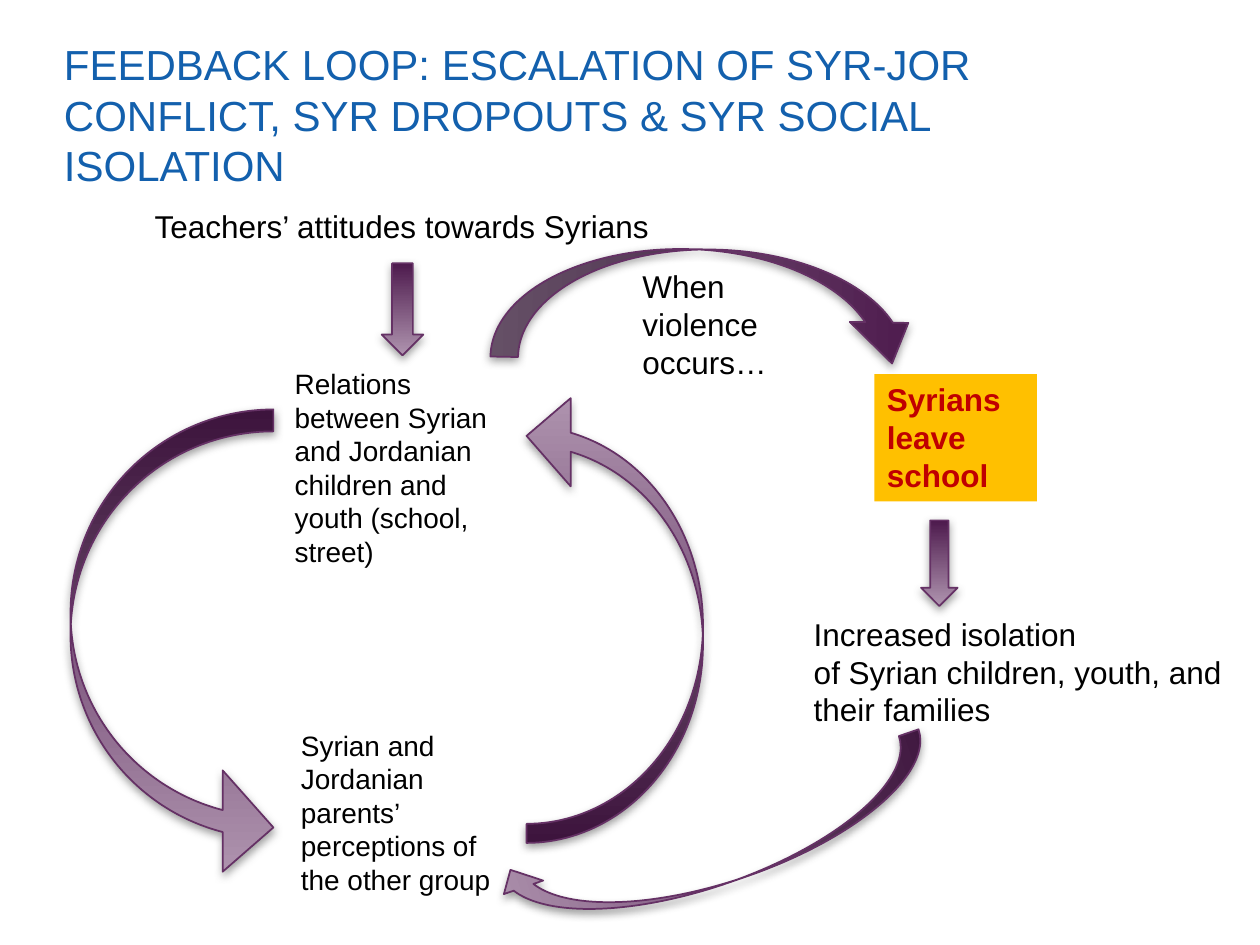
from lxml.etree import SubElement
from pptx import Presentation
from pptx.dml.color import RGBColor
from pptx.enum.shapes import MSO_SHAPE
from pptx.enum.text import MSO_ANCHOR, MSO_AUTO_SIZE, PP_ALIGN
from pptx.oxml.ns import qn
from pptx.util import Inches, Pt

COLORS = {
    "title": "1360AD", "text": "000000", "alert": "C00000", "box": "FFC000",
    "dark": "4D1A4D", "light": "AF94AF", "muted": "7F6580",
    "outline": "653165", "shadow": "808080",
}
FONT = "Arial"
COLS, ROWS = 100, 75
CELL = Inches(10) // COLS


def rgb(name):
    return RGBColor.from_string(COLORS[name])


def cells(*box):
    """Turn left, top, width, height in grid cells into lengths."""
    return [round(CELL * n) for n in box]


def write(sp, text, size, color="text", bold=False, wrap=True, grow=True):
    tf = sp.text_frame
    tf.text = text
    tf.word_wrap = wrap
    tf.vertical_anchor = MSO_ANCHOR.TOP
    tf.auto_size = MSO_AUTO_SIZE.SHAPE_TO_FIT_TEXT if grow else MSO_AUTO_SIZE.NONE
    for p in tf.paragraphs:
        p.alignment = PP_ALIGN.LEFT
        for r in p.runs:
            r.font.name = FONT
            r.font.size = Pt(size)
            r.font.bold = bold
            r.font.color.rgb = rgb(color)


def add_label(slide, box, text, size, **style):
    write(slide.shapes.add_textbox(*cells(*box)), text, size, **style)


def add_alert(slide, box, text):
    sp = slide.shapes.add_shape(MSO_SHAPE.RECTANGLE, *cells(*box))
    sp.shadow.inherit = False
    sp.fill.solid()
    sp.fill.fore_color.rgb = rgb("box")
    sp.line.fill.background()
    write(sp, text, 18, color="alert", bold=True)


def drop_shadow(sp):
    sp.shadow.inherit = False
    effects = sp._element.spPr.find(qn("a:effectLst"))
    shadow = SubElement(effects, qn("a:outerShdw"), blurRad=str(Pt(5)),
                        dist=str(Pt(2)), dir="5400000", rotWithShape="0")
    color = SubElement(shadow, qn("a:srgbClr"), val=COLORS["shadow"])
    SubElement(color, qn("a:alpha"), val="75000")


def add_arrow(slide, kind, box, adjust=(), rotation=0, flip="",
              shades=("dark", "light"), angle=270):
    """Add a shaded block arrow; flip holds the axes to mirror, H and V."""
    sp = slide.shapes.add_shape(kind, *cells(*box))
    for i, value in enumerate(adjust):
        sp.adjustments[i] = value
    sp.rotation = rotation
    for axis in flip:
        sp._element.spPr.xfrm.set("flip" + axis, "1")
    sp.fill.gradient()
    sp.fill.gradient_angle = angle
    for stop, shade, position in zip(sp.fill.gradient_stops, shades, (0, 1)):
        stop.color.rgb = rgb(shade)
        stop.position = position
    sp.line.color.rgb = rgb("outline")
    sp.line.width = Pt(1)
    drop_shadow(sp)


def main():
    prs = Presentation()
    prs.slide_width, prs.slide_height = CELL * COLS, CELL * ROWS
    slide = prs.slides.add_slide(prs.slide_layouts[6])
    loop = (0.108, 0.5, 0.25)

    add_label(slide, (4.1, 2.6, 79.7, 11.8),
              "FEEDBACK LOOP: ESCALATION OF SYR-JOR CONFLICT, "
              "SYR DROPOUTS & SYR SOCIAL ISOLATION", 24, color="title", grow=False)

    add_arrow(slide, MSO_SHAPE.CURVED_RIGHT_ARROW, (5.6, 32.5, 16.1, 37.2), loop)
    add_label(slide, (22.4, 28.6, 19.5, 17.2),
              "Relations between Syrian and Jordanian children and youth "
              "(school, street)", 16)
    add_label(slide, (22.9, 57.3, 17.2, 14.5),
              "Syrian and Jordanian parents’ perceptions of the other group", 16)
    add_arrow(slide, MSO_SHAPE.CURVED_RIGHT_ARROW, (41.8, 31.1, 14, 35.8), loop,
              flip="HV")

    add_label(slide, (11.3, 15.9, 41.6, 4), "Teachers’ attitudes towards Syrians",
              18, wrap=False)
    add_arrow(slide, MSO_SHAPE.DOWN_ARROW, (30.3, 20.9, 3.3, 7.3))

    add_label(slide, (50, 20.7, 15.6, 10.1), "When violence occurs…", 18)
    add_alert(slide, (69.4, 29.7, 12.9, 10.1), "Syrians leave school")
    add_arrow(slide, MSO_SHAPE.DOWN_ARROW, (73.1, 41.3, 2.9, 6.8))
    add_label(slide, (63.6, 48.3, 36.2, 10.1),
              "Increased isolation\nof Syrian children, youth, and their families", 18)

    add_arrow(slide, MSO_SHAPE.CURVED_LEFT_ARROW, (53.7, 48.9, 6.6, 35.9), rotation=71)
    add_arrow(slide, MSO_SHAPE.CURVED_UP_ARROW, (39, 19.8, 34.2, 8.8),
              (0.249, 0.528, 0.369), rotation=1, flip="V",
              shades=("muted", "dark"), angle=0)

    prs.save("out.pptx")


if __name__ == "__main__":
    main()
